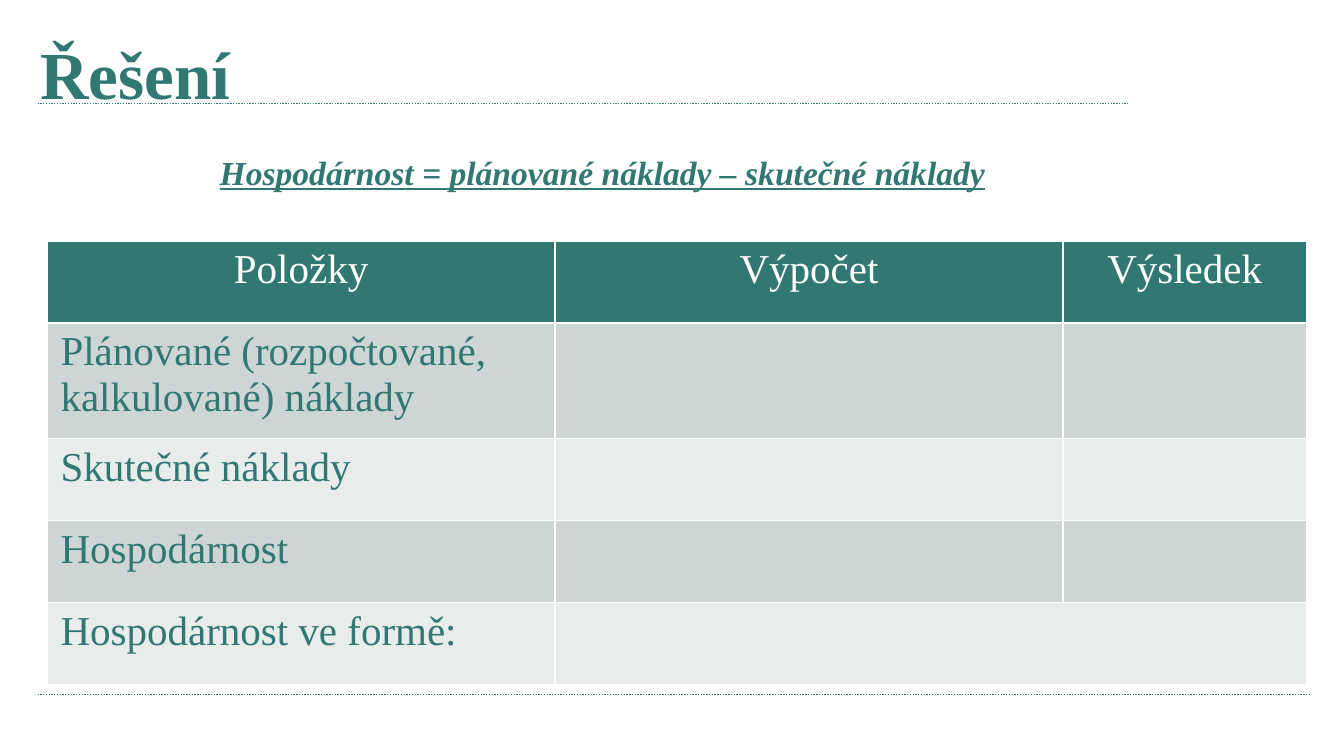
from pptx import Presentation
from pptx.dml.color import RGBColor
from pptx.enum.dml import MSO_LINE
from pptx.enum.shapes import MSO_CONNECTOR
from pptx.enum.text import MSO_ANCHOR, PP_ALIGN
from pptx.oxml.ns import qn
from pptx.util import Cm, Pt

CENTER, LEFT = PP_ALIGN.CENTER, PP_ALIGN.LEFT
MIDDLE = MSO_ANCHOR.MIDDLE
DOTTED = MSO_LINE.ROUND_DOT
STRAIGHT = MSO_CONNECTOR.STRAIGHT
TITLE_ONLY = 5

TITLE = "Řešení"
FORMULA = "Hospodárnost = plánované náklady – skutečné náklady"
HEADINGS = ["Položky", "Výpočet", "Výsledek"]
ITEMS = [
    "Plánované (rozpočtované, kalkulované) náklady",
    "Skutečné náklady",
    "Hospodárnost",
    "Hospodárnost ve formě:",
]

THEME = {
    "font": "Times New Roman",
    "green": RGBColor(0x30, 0x78, 0x71),
    "white": RGBColor(0xFF, 0xFF, 0xFF),
    "bands": [RGBColor(0xCD, 0xD6, 0xD5), RGBColor(0xE8, 0xEC, 0xEB)],
    "title": Pt(36),
    "formula": Pt(18),
    "table": Pt(22),
    "rule": Pt(0.75),
}

# Lengths in centimetres
RULE_LEFT = 0.71
RULES = [(1.96, 21.31), (13.13, 24.77)]  # height on the slide, right end
TITLE_BOX = (0.51, 0.36, 22.4, 2.01)
FORMULA_BOX = (1.09, 2.74, 20.6, 1.02)
TABLE_LEFT, TABLE_TOP = 0.89, 4.55
COLUMN_WIDTHS = [9.6, 9.6, 4.6]
ROW_HEIGHT, TALL_ROW_HEIGHT = 1.55, 2.19


def write(frame, text, size, color, align=LEFT, **styles):
    para = frame.paragraphs[0]
    para.alignment = align
    span = para.add_run()
    span.text = text
    span.font.color.rgb = color
    values = {"name": THEME["font"], "size": size, "bold": False, **styles}
    for name, value in values.items():
        setattr(span.font, name, value)


def add_rule(slide, top, right):
    rule = slide.shapes.add_connector(
        STRAIGHT, Cm(RULE_LEFT), Cm(top), Cm(right), Cm(top))
    rule.line.color.rgb = THEME["green"]
    rule.line.width = THEME["rule"]
    rule.line.dash_style = DOTTED
    properties = rule._element.spPr
    properties.append(properties.makeelement(qn("a:effectLst"), {}))


def add_title(slide):
    title = slide.shapes.title
    for name, value in zip(("left", "top", "width", "height"), TITLE_BOX):
        setattr(title, name, Cm(value))
    title.text_frame.vertical_anchor = MIDDLE
    write(title.text_frame, TITLE, THEME["title"], THEME["green"], bold=True)


def add_formula(slide):
    box = slide.shapes.add_textbox(*map(Cm, FORMULA_BOX))
    box.text_frame.word_wrap = True
    write(box.text_frame, FORMULA, THEME["formula"], THEME["green"], CENTER,
          bold=True, italic=True, underline=True)


def add_cost_table(slide):
    heights = [ROW_HEIGHT, TALL_ROW_HEIGHT] + [ROW_HEIGHT] * (len(ITEMS) - 1)
    table = slide.shapes.add_table(
        len(heights), len(COLUMN_WIDTHS), Cm(TABLE_LEFT), Cm(TABLE_TOP),
        Cm(sum(COLUMN_WIDTHS)), Cm(sum(heights))).table
    for column, width in zip(table.columns, COLUMN_WIDTHS):
        column.width = Cm(width)
    for index, (row, height) in enumerate(zip(table.rows, heights)):
        row.height = Cm(height)
        fill = THEME["bands"][(index - 1) % 2] if index else THEME["green"]
        for cell in row.cells:
            cell.fill.solid()
            cell.fill.fore_color.rgb = fill
    for column, heading in enumerate(HEADINGS):
        write(table.cell(0, column).text_frame, heading,
              THEME["table"], THEME["white"], CENTER)
    for row, item in enumerate(ITEMS, start=1):
        write(table.cell(row, 0).text_frame, item,
              THEME["table"], THEME["green"])
    last = len(ITEMS)
    table.cell(last, 1).merge(table.cell(last, 2))


def main():
    deck = Presentation()
    deck.slide_width, deck.slide_height = Cm(25.4), Cm(14.29)
    slide = deck.slides.add_slide(deck.slide_layouts[TITLE_ONLY])
    for top, right in RULES:
        add_rule(slide, top, right)
    add_title(slide)
    add_formula(slide)
    add_cost_table(slide)
    deck.save("out.pptx")


if __name__ == "__main__":
    main()
